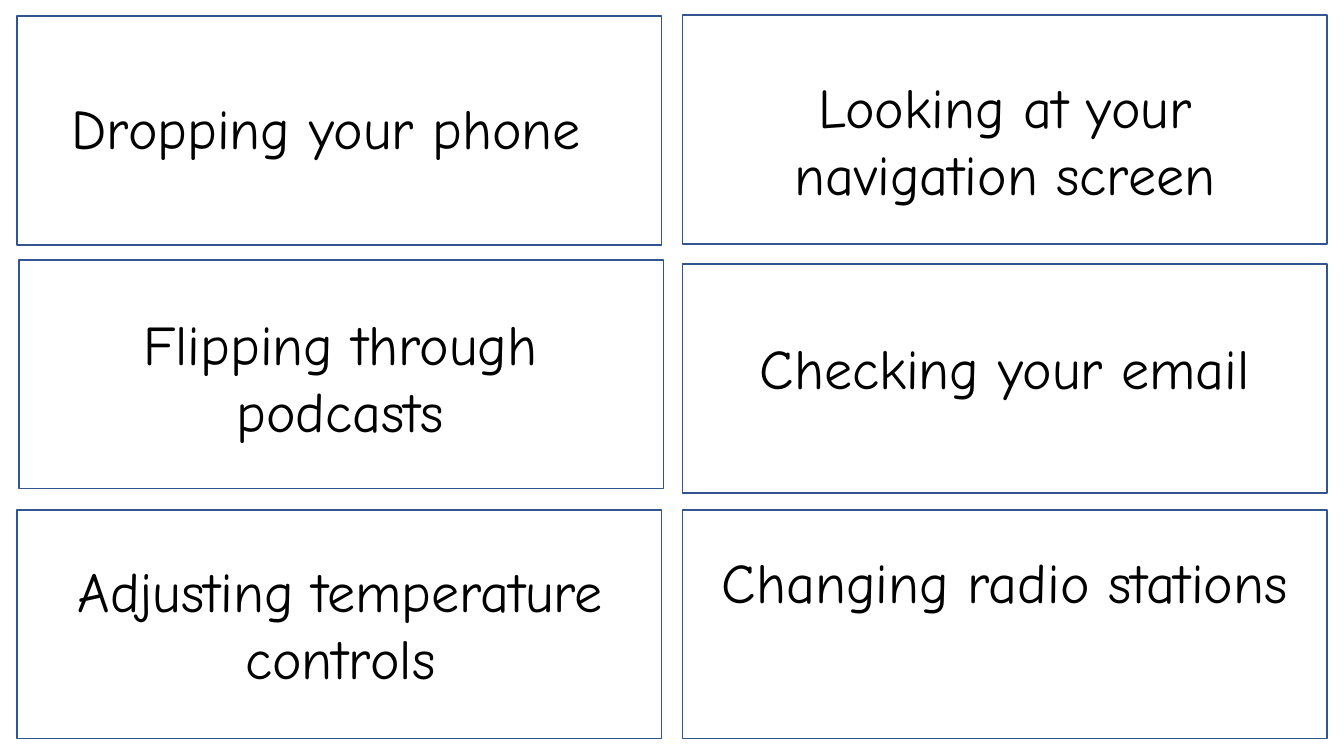
from pptx import Presentation
from pptx.dml.color import RGBColor
from pptx.enum.shapes import MSO_SHAPE
from pptx.enum.text import MSO_AUTO_SIZE, PP_ALIGN
from pptx.util import Inches, Pt

RECT = MSO_SHAPE.RECTANGLE
GROW = MSO_AUTO_SIZE.SHAPE_TO_FIT_TEXT
CENTER = PP_ALIGN.CENTER

COLORS = {"card": "FFFFFF", "edge": "325491", "text": "000000"}
FONT = {"name": "Comic Neue", "size": Pt(40)}
FRAME = {"word_wrap": True, "auto_size": GROW}
CARD_SIZE = (6.39, 2.27)
LABEL_WIDTH = 6.09
ONE_LINE, TWO_LINES = 0.77, 1.45

CARDS = [
    ("Dropping your phone", (0.17, 0.16), (0.19, 0.88), ONE_LINE),
    ("Looking at your navigation screen", (6.77, 0.15), (6.92, 0.67), TWO_LINES),
    ("Flipping through podcasts", (0.19, 2.58), (0.33, 3.02), TWO_LINES),
    ("Checking your email", (6.77, 2.62), (6.92, 3.26), ONE_LINE),
    ("Adjusting temperature controls", (0.17, 5.06), (0.33, 5.47), TWO_LINES),
    ("Changing radio stations", (6.77, 5.06), (6.92, 5.38), TWO_LINES),
]


def color(name):
    return RGBColor.from_string(COLORS[name])


def apply(target, values):
    for key, value in values.items():
        setattr(target, key, value)


def add_card(slide, spot):
    card = slide.shapes.add_shape(RECT, *map(Inches, spot + CARD_SIZE))
    card.shadow.inherit = False
    card.fill.solid()
    card.fill.fore_color.rgb = color("card")
    card.line.color.rgb = color("edge")
    card.line.width = Pt(1)


def add_label(slide, text, spot, height):
    box = slide.shapes.add_textbox(*map(Inches, spot + (LABEL_WIDTH, height)))
    apply(box.text_frame, FRAME)
    para = box.text_frame.paragraphs[0]
    para.alignment = CENTER
    run = para.add_run()
    run.text = text
    apply(run.font, FONT)
    run.font.color.rgb = color("text")


def main():
    deck = Presentation()
    deck.slide_width = Inches(13.33)
    deck.slide_height = Inches(7.5)
    slide = deck.slides.add_slide(deck.slide_layouts[6])
    for text, corner, spot, height in CARDS:
        add_card(slide, corner)
        add_label(slide, text, spot, height)
    deck.save("out.pptx")


if __name__ == "__main__":
    main()
